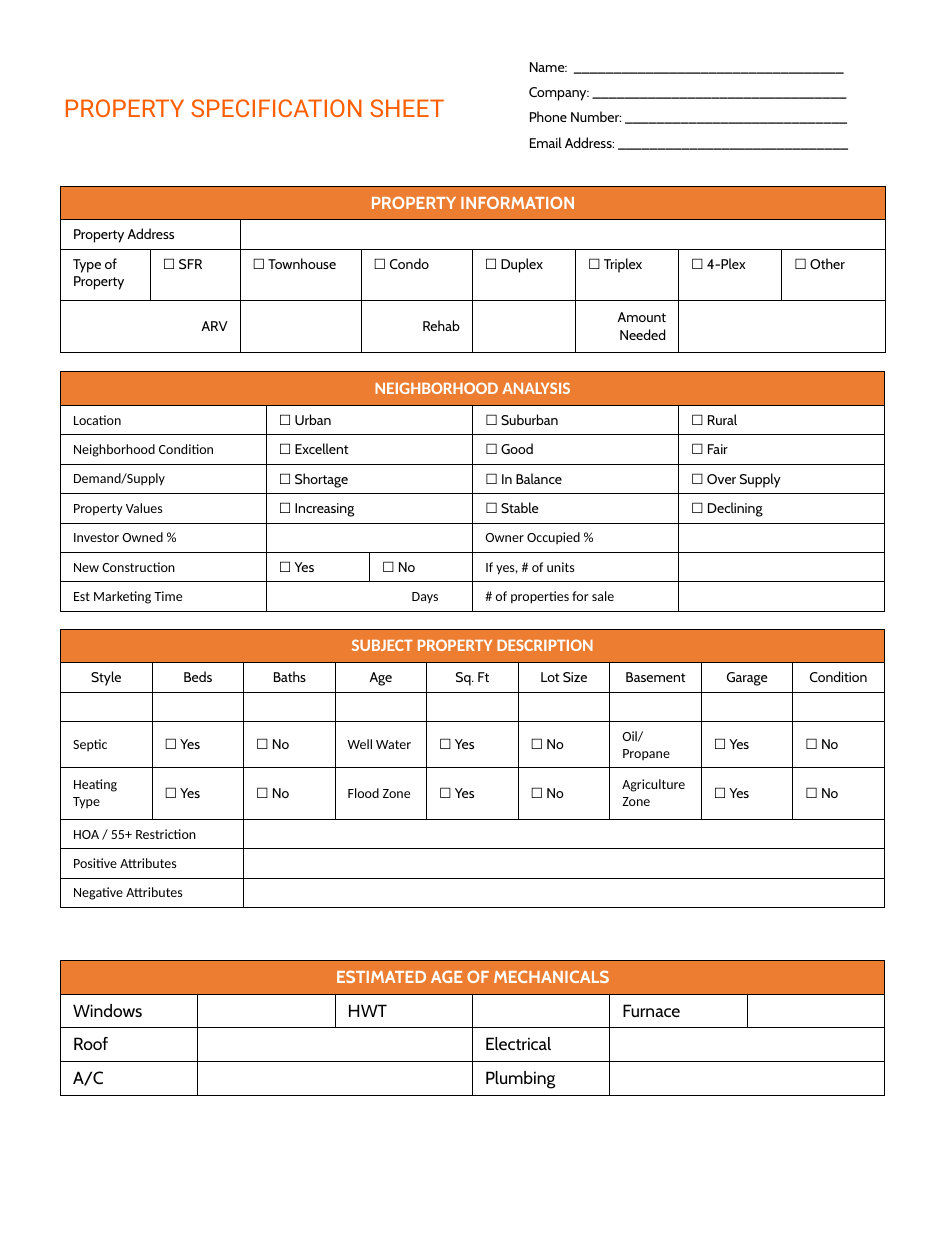
from dataclasses import dataclass

from lxml import etree
from pptx import Presentation
from pptx import util as u
from pptx.dml import color
from pptx.enum import text
from pptx.oxml import ns

BLACK, WHITE, ORANGE, TITLE = "000000", "FFFFFF", "ED7D31", "FF5F00"
LEFT, WIDTH = 1.22, 16.61
HEAD, LINE, TALL = 0.68, 0.59, 1.04
CENTER, RIGHT = text.PP_ALIGN.CENTER, text.PP_ALIGN.RIGHT
TOP, MIDDLE = text.MSO_ANCHOR.TOP, text.MSO_ANCHOR.MIDDLE


@dataclass
class Cell:
    words: str = ""
    span: int = 1
    align: text.PP_ALIGN = text.PP_ALIGN.LEFT
    font: str = ""
    margin_right: float = 0.25


@dataclass
class Row:
    cells: list[Cell]
    height: float = LINE
    anchor: text.MSO_ANCHOR = TOP


@dataclass
class Section:
    title: str
    top: float
    cols: list[float]
    rows: list[Row]
    title_font: str = "Cabin"
    label_font: str = "Cabin"
    size: int = 8


def rgb(value: str) -> color.RGBColor:
    return color.RGBColor.from_string(value)


def style(font, name: str, size: float, value: str, bold: bool = False) -> None:
    font.name = name
    font.size = u.Pt(size)
    font.bold = bold
    font.color.rgb = rgb(value)


def add_borders(cell) -> None:
    tc_pr = cell._tc.get_or_add_tcPr()
    for side in ("lnL", "lnR", "lnT", "lnB"):
        ln = etree.SubElement(tc_pr, ns.qn(f"a:{side}"), w=str(int(u.Pt(0.5))))
        fill = etree.SubElement(ln, ns.qn("a:solidFill"))
        etree.SubElement(fill, ns.qn("a:srgbClr"), val=BLACK)


def fill_cell(cell, content: Cell, font: str, size: int, value: str, bold: bool) -> None:
    tf = cell.text_frame
    tf.text = content.words
    for p in tf.paragraphs:
        p.alignment = content.align
        style(p.font, font, size, value, bold)
        if not content.words:
            etree.SubElement(p._p, ns.qn("a:endParaRPr"), sz=str(size * 100))


def add_section(s, section: Section) -> None:
    title = Cell(section.title, len(section.cols), CENTER, section.title_font)
    rows = [Row([title], HEAD), *section.rows]
    height = sum(row.height for row in rows)
    frame = s.shapes.add_table(
        len(rows), len(section.cols),
        u.Cm(LEFT), u.Cm(section.top), u.Cm(WIDTH), u.Cm(height),
    )
    table = frame.table
    table.first_row = table.horz_banding = False
    for column, width in zip(table.columns, section.cols):
        column.width = u.Cm(width)
    for i, row in enumerate(rows):
        header = i == 0
        size = 10 if header else section.size
        table.rows[i].height = u.Cm(row.height)
        col = 0
        for content in row.cells:
            default = "Cabin" if content.words.startswith("☐") else section.label_font
            for offset in range(content.span):
                cell = table.cell(i, col + offset)
                add_borders(cell)
                cell.fill.solid()
                cell.fill.fore_color.rgb = rgb(ORANGE if header else WHITE)
                cell.vertical_anchor = row.anchor
                cell.margin_right = u.Cm(content.margin_right)
                fill_cell(cell, content if offset == 0 else Cell(), content.font or default,
                          size, WHITE if header else BLACK, header)
            if content.span > 1:
                table.cell(i, col).merge(table.cell(i, col + content.span - 1))
            col += content.span


def add_text(s, box: tuple[float, float, float, float], lines: list[str],
             font: str, size: float, value: str, spacing: float = 1.0) -> None:
    tf = s.shapes.add_textbox(*map(u.Cm, box)).text_frame
    tf.word_wrap = False
    tf.text = "\n".join(lines)
    for p in tf.paragraphs:
        p.line_spacing = spacing
        style(p.font, font, size, value)


def choices(label: str, *options: str) -> Row:
    first, *others = [f"☐ {option}" for option in options]
    return Row([Cell(label), Cell(first, 2), *map(Cell, others)])


def yes_no(labels: list[str], height: float) -> Row:
    cells = [Cell(t) for label in labels for t in (label, "☐ Yes", "☐ No")]
    return Row(cells, height, MIDDLE)


PROPERTY_TYPES = ["SFR", "Townhouse", "Condo", "Duplex", "Triplex", "4-Plex", "Other"]
FEATURES = ["Style", "Beds", "Baths", "Age", "Sq. Ft", "Lot Size",
            "Basement", "Garage", "Condition"]
REMARKS = ["HOA / 55+ Restriction", "Positive Attributes", "Negative Attributes"]

SECTIONS = [
    Section("PROPERTY INFORMATION", 3.75, [1.81, 1.81, 2.44, 2.24] + [2.08] * 4, [
        Row([Cell("Property Address", 2), Cell(span=6)]),
        Row([Cell("Type of Property"), *(Cell(f"☐ {t}") for t in PROPERTY_TYPES)], TALL),
        Row([Cell("ARV", 2, RIGHT), Cell(), Cell("Rehab", 1, RIGHT), Cell(),
             Cell("Amount Needed", 1, RIGHT), Cell(span=2)], TALL, MIDDLE),
    ]),
    Section("NEIGHBORHOOD ANALYSIS", 7.49, [4.15, 2.08, 2.08, 4.15, 4.15], [
        choices("Location", "Urban", "Suburban", "Rural"),
        choices("Neighborhood Condition", "Excellent", "Good", "Fair"),
        choices("Demand/Supply", "Shortage", "In Balance", "Over Supply"),
        choices("Property Values", "Increasing", "Stable", "Declining"),
        Row([Cell("Investor Owned %"), Cell(span=2), Cell("Owner Occupied %"), Cell()]),
        Row([Cell("New Construction"), Cell("☐ Yes"), Cell("☐ No"),
             Cell("If yes, # of units"), Cell()]),
        Row([Cell("Est Marketing Time"), Cell("Days", 2, RIGHT, margin_right=0.69),
             Cell("# of properties for sale"), Cell()]),
    ], "Calibri", "Calibri"),
    Section("SUBJECT PROPERTY DESCRIPTION", 12.68, [WIDTH / 9] * 9, [
        Row([Cell(name, 1, CENTER, "Cabin") for name in FEATURES]),
        Row([Cell(font="Cabin") for _ in FEATURES]),
        yes_no(["Septic", "Well Water", "Oil/\nPropane"], 0.93),
        yes_no(["Heating Type", "Flood Zone", "Agriculture Zone"], TALL),
        *(Row([Cell(remark, 2), Cell(span=7)]) for remark in REMARKS),
    ], "Calibri", "Calibri"),
    Section("ESTIMATED AGE OF MECHANICALS", 19.36, [WIDTH / 6] * 6, [
        Row([Cell("Windows"), Cell(), Cell("HWT"), Cell(), Cell("Furnace"), Cell()], HEAD),
        Row([Cell("Roof"), Cell(span=2), Cell("Electrical"), Cell(span=2)], HEAD),
        Row([Cell("A/C"), Cell(span=2), Cell("Plumbing"), Cell(span=2)], HEAD),
    ], size=10),
]

CONTACT = [("Name:  ", 34), ("Company: ", 32), ("Phone Number: ", 28), ("Email Address: ", 29)]


def main() -> None:
    prs = Presentation()
    prs.slide_width, prs.slide_height = u.Cm(19.05), u.Cm(25.4)
    s = prs.slides.add_slide(prs.slide_layouts[6])
    add_text(s, (1.04, 1.75, 8.31, 0.86), ["PROPERTY SPECIFICATION SHEET"],
             "Roboto", 14, TITLE)
    add_text(s, (10.41, 0.89, 6.99, 2.26), [label + "_" * n for label, n in CONTACT],
             "Cabin", 8, BLACK, 1.5)
    for section in SECTIONS:
        add_section(s, section)
    prs.save("out.pptx")


if __name__ == "__main__":
    main()
